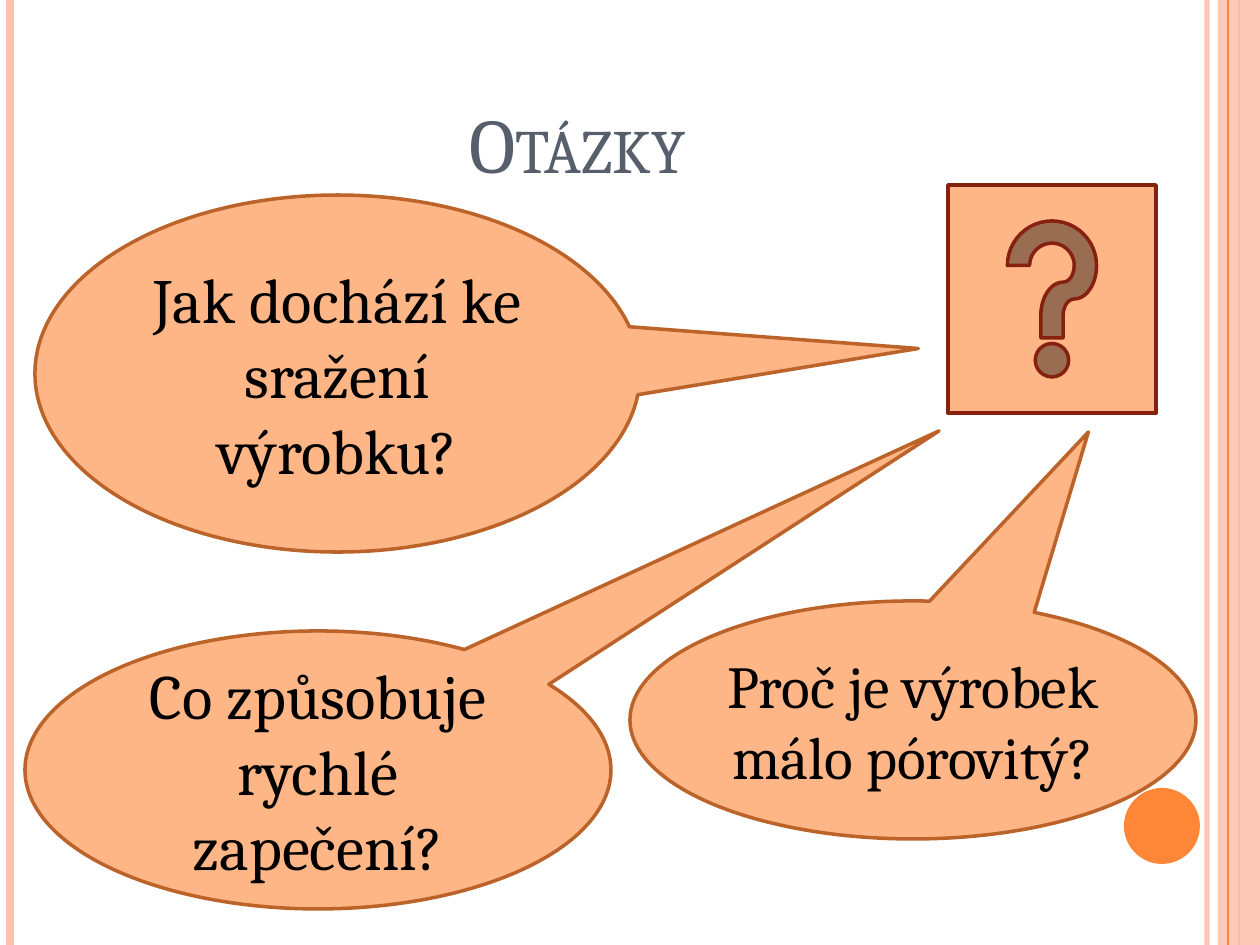
from lxml.etree import SubElement
from pptx import Presentation
from pptx.dml.color import RGBColor
from pptx.enum.shapes import MSO_CONNECTOR as Link, MSO_SHAPE as Kind
from pptx.enum.text import MSO_ANCHOR as Anchor, PP_ALIGN as Align
from pptx.oxml.ns import qn
from pptx.util import Emu, Pt

SCALE = 914400 / 126
WIDE, HIGH = 1260, 945
FONT = "Cambria"
HUES = {
    "rose": "FEC3AE",
    "orange": "FE8637",
    "peach": "FEB687",
    "rust": "BC6329",
    "brick": "862110",
    "slate": "575F6D",
    "black": "000000",
}


def px(n):
    return Emu(round(n * SCALE))


def hue(name):
    return RGBColor.from_string(HUES[name])


def fade(item, alpha):
    tint = next(item._element.spPr.iter(qn("a:srgbClr")))
    SubElement(tint, qn("a:alpha")).set("val", str(alpha * 1000))


def add_rule(slide, x, name, width):
    rule = slide.shapes.add_connector(Link.STRAIGHT, px(x), 0, px(x), px(HIGH))
    rule.line.color.rgb = hue(name)
    rule.line.width = Pt(width)
    SubElement(rule._element.spPr, qn("a:effectLst"))
    return rule


def add_shape(slide, kind, box, fill, edge=None):
    shape = slide.shapes.add_shape(kind, *map(px, box))
    shape.shadow.inherit = False
    shape.fill.solid()
    shape.fill.fore_color.rgb = hue(fill)
    if edge:
        shape.line.color.rgb = hue(edge)
        shape.line.width = Pt(2)
    else:
        shape.line.fill.background()
    return shape


def add_text(shape, text, size, name, anchor):
    frame = shape.text_frame
    frame.word_wrap = True
    frame.vertical_anchor = anchor
    para = frame.paragraphs[0]
    para.alignment = Align.CENTER
    para.font.name = FONT
    para.font.size = Pt(size)
    para.font.color.rgb = hue(name)
    run = para.add_run()
    run.text = text
    return run


def add_title(slide, text):
    box = slide.shapes.add_textbox(*map(px, (63, 38, 1029, 157)))
    run = add_text(box, text, 44, "slate", Anchor.BOTTOM)
    run._r.get_or_add_rPr().set("cap", "small")


def add_bubble(slide, text, box, tip, size):
    shape = add_shape(slide, Kind.OVAL_CALLOUT, box, "peach", "rust")
    shape.adjustments[0], shape.adjustments[1] = tip
    add_text(shape, text, size, "black", Anchor.MIDDLE)


def add_frame(slide):
    fade(add_rule(slide, 1207, "rose", 3), 93)
    add_rule(slide, 10, "rose", 4.5)
    add_rule(slide, 1239, "orange", 1.5)
    fade(add_shape(slide, Kind.RECTANGLE, (1218, 0, 42, HIGH), "rose"), 87)
    add_rule(slide, 1228, "orange", 0.75)
    add_shape(slide, Kind.OVAL, (1124, 788, 76, 76), "orange")


def main():
    deck = Presentation()
    deck.slide_width, deck.slide_height = px(WIDE), px(HIGH)
    slide = deck.slides.add_slide(deck.slide_layouts[6])
    add_frame(slide)
    add_title(slide, "Otázky")
    add_bubble(slide, "Jak dochází ke sražení výrobku?",
               (35, 195, 605, 357), (0.96, -0.07), 36)
    add_bubble(slide, "Co způsobuje rychlé zapečení?",
               (25, 631, 586, 278), (1.06, -1.22), 36)
    add_shape(slide, Kind.ACTION_BUTTON_HELP, (948, 185, 208, 228), "peach", "brick")
    add_bubble(slide, "Proč je výrobek málo pórovitý?",
               (630, 601, 566, 238), (0.31, -1.21), 34)
    deck.save("out.pptx")


if __name__ == "__main__":
    main()
